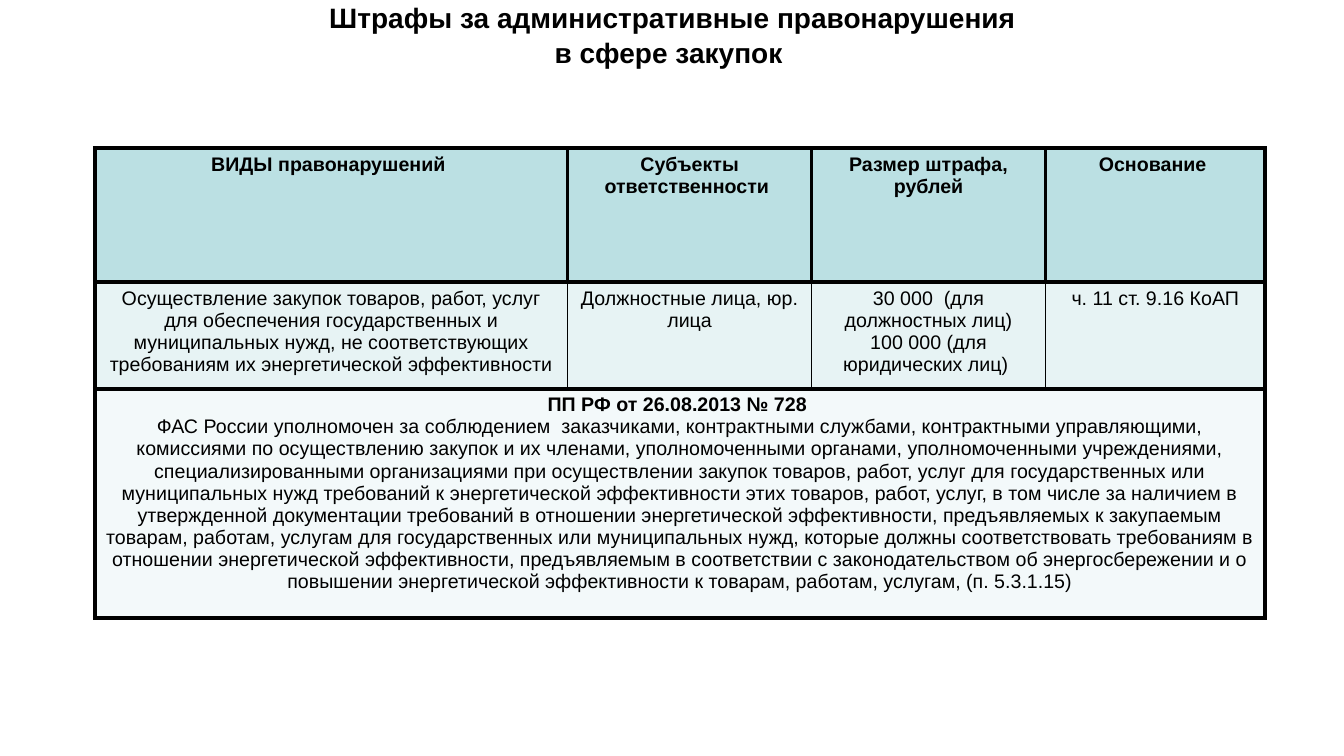
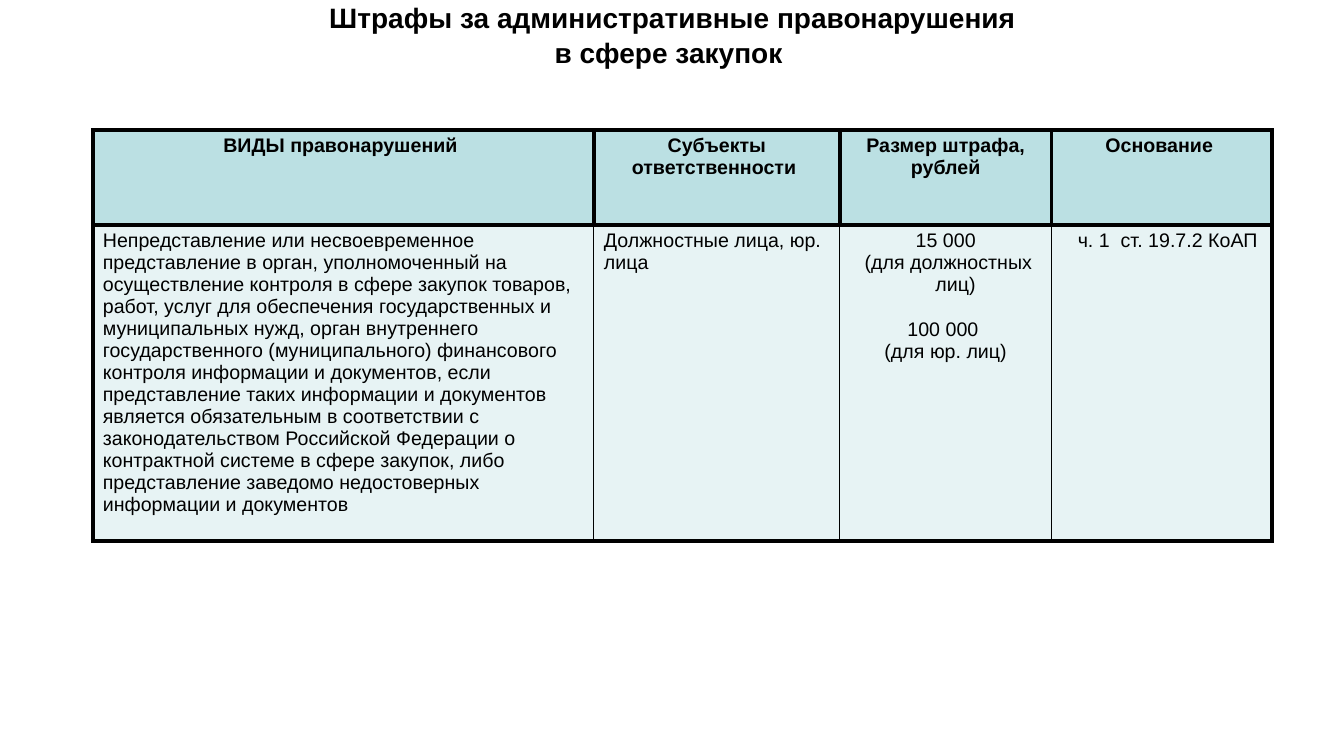
from lxml.etree import SubElement
from pptx import Presentation
from pptx.dml.color import RGBColor
from pptx.enum.text import MSO_ANCHOR, PP_ALIGN
from pptx.oxml import parse_xml
from pptx.oxml.ns import nsdecls, qn
from pptx.util import Inches, Pt

COLORS = {"ink": "000000", "header": "BBE0E3", "body": "E7F3F4", "note": "F3F9FA"}
FONT = "Arial"
THICK, THIN = 3, 1
TITLE = "Штрафы за административные правонарушения\vв сфере закупок "
HEADINGS = ["ВИДЫ правонарушений ", "Субъекты ответственности ",
            "Размер штрафа, рублей", "Основание "]


def write(paragraph, text, size=14, bold=False, align=PP_ALIGN.CENTER,
          left=0, hanging=0, before=0, spacing=None):
    paragraph.text = text
    paragraph.alignment = align
    paragraph.space_before = Pt(before)
    if spacing:
        paragraph.line_spacing = spacing
    if left:
        properties = paragraph._p.get_or_add_pPr()
        properties.set("marL", str(Inches(left)))
        properties.set("indent", str(-Inches(hanging)))
    for run in paragraph.runs:
        run.font.name = FONT
        run.font.size = Pt(size)
        run.font.bold = bold
        run.font.color.rgb = RGBColor.from_string(COLORS["ink"])


def line(*parts, **style):
    return " ".join(parts), style


class Deck:
    def __init__(self):
        self.presentation = Presentation()
        self.presentation.slide_width = Inches(13.33)
        self.presentation.slide_height = Inches(7.5)
        self.slide = None

    def add_slide(self):
        self.slide = self.presentation.slides.add_slide(self.presentation.slide_layouts[6])
        self.title()

    def title(self):
        frame = self.slide.shapes.add_textbox(
            Inches(2.17), Inches(0), Inches(9), Inches(0.68)).text_frame
        frame.word_wrap = True
        frame.vertical_anchor = MSO_ANCHOR.MIDDLE
        write(frame.paragraphs[0], TITLE, size=20, bold=True, spacing=1.05)

    def borders(self, cell, widths):
        properties = cell._tc.get_or_add_tcPr()
        for index, (side, width) in enumerate(zip("LRTB", widths)):
            edge = parse_xml(f'<a:ln{side} {nsdecls("a")} w="{Pt(width)}"/>')
            fill = SubElement(edge, qn("a:solidFill"))
            SubElement(fill, qn("a:srgbClr")).set("val", COLORS["ink"])
            properties.insert(index, edge)

    def fill_cell(self, cell, color, lines):
        cell.fill.solid()
        cell.fill.fore_color.rgb = RGBColor.from_string(COLORS[color])
        frame = cell.text_frame
        for index, (text, style) in enumerate(lines):
            paragraph = frame.add_paragraph() if index else frame.paragraphs[0]
            write(paragraph, text, **style)

    def fines_table(self, left, top, columns, heights, offence, note=None):
        rows = [("header", [[line(text, bold=True)] for text in HEADINGS]),
                ("body", offence)]
        if note:
            rows.append(("note", [note] + [[]] * (len(columns) - 1)))
        table = self.slide.shapes.add_table(
            len(rows), len(columns), Inches(left), Inches(top),
            Inches(sum(columns)), Inches(sum(heights))).table
        table.first_row = table.horz_banding = False
        for column, width in zip(table.columns, columns):
            column.width = Inches(width)
        for row, height in zip(table.rows, heights):
            row.height = Inches(height)
        if note:
            table.cell(2, 0).merge(table.cell(2, len(columns) - 1))

        last = len(columns) - 1
        for r, (color, cells) in enumerate(rows):
            inner = THIN if color == "body" else THICK
            for c, lines in enumerate(cells):
                cell = table.cell(r, c)
                self.fill_cell(cell, color, lines)
                self.borders(cell, [THICK if c == 0 else inner,
                                    THICK if c == last else inner, THICK, THICK])

    def save(self):
        self.presentation.save("out.pptx")


def energy_slide(deck):
    deck.add_slide()
    deck.fines_table(
        0.94, 1.47, [4.69, 2.42, 2.32, 2.18], [1.33, 1.06, 2.27],
        offence=[
            [line("Осуществление закупок товаров, работ, услуг для обеспечения",
                  "государственных и муниципальных нужд, не соответствующих",
                  "требованиям их энергетической эффективности")],
            [line("Должностные лица, юр. лица")],
            [line("30 000  (для должностных лиц)"),
             line("100 000 (для юридических лиц) ")],
            [line("ч. 11 ст. 9.16 КоАП")],
        ],
        note=[
            line("ПП РФ от 26.08.2013 № 728 ", bold=True),
            line("ФАС России уполномочен за соблюдением  заказчиками, контрактными",
                 "службами, контрактными управляющими, комиссиями по осуществлению",
                 "закупок и их членами, уполномоченными органами, уполномоченными",
                 "учреждениями, специализированными организациями при осуществлении",
                 "закупок товаров, работ, услуг для государственных или муниципальных",
                 "нужд требований к энергетической эффективности этих товаров, работ,",
                 "услуг, в том числе за наличием в утвержденной документации требований",
                 "в отношении энергетической эффективности, предъявляемых к закупаемым",
                 "товарам, работам, услугам для государственных или муниципальных нужд,",
                 "которые должны соответствовать требованиям в отношении энергетической",
                 "эффективности, предъявляемым в соответствии с законодательством об",
                 "энергосбережении и о повышении энергетической эффективности к товарам,",
                 "работам, услугам, (п. 5.3.1.15)"),
        ])


def reporting_slide(deck):
    flush = {"align": PP_ALIGN.LEFT}
    hang = {"left": 0.25, "hanging": 0.25}
    deck.add_slide()
    deck.fines_table(
        0.92, 1.29, [4.97, 2.44, 2.1, 2.19], [0.94, 2.94],
        offence=[
            [line("Непредставление или несвоевременное представление в орган,",
                  "уполномоченный на осуществление контроля в сфере закупок товаров,",
                  "работ, услуг для обеспечения государственных и муниципальных нужд,",
                  "орган внутреннего государственного (муниципального) финансового",
                  "контроля информации и документов, если представление таких",
                  "информации и документов является обязательным в соответствии с",
                  "законодательством Российской Федерации о контрактной системе в",
                  "сфере закупок, либо представление заведомо недостоверных",
                  "информации и документов", **flush)],
            [line("Должностные лица, юр. лица", **flush)],
            [line("15 000", **hang),
             line(" (для должностных лиц) ", **hang),
             line("100 000 ", before=16, **hang),
             line("(для юр. лиц)", **hang)],
            [line("ч. 1  ст. 19.7.2 КоАП", left=0.16, **flush)],
        ])


def main():
    deck = Deck()
    energy_slide(deck)
    reporting_slide(deck)
    deck.save()


if __name__ == "__main__":
    main()
